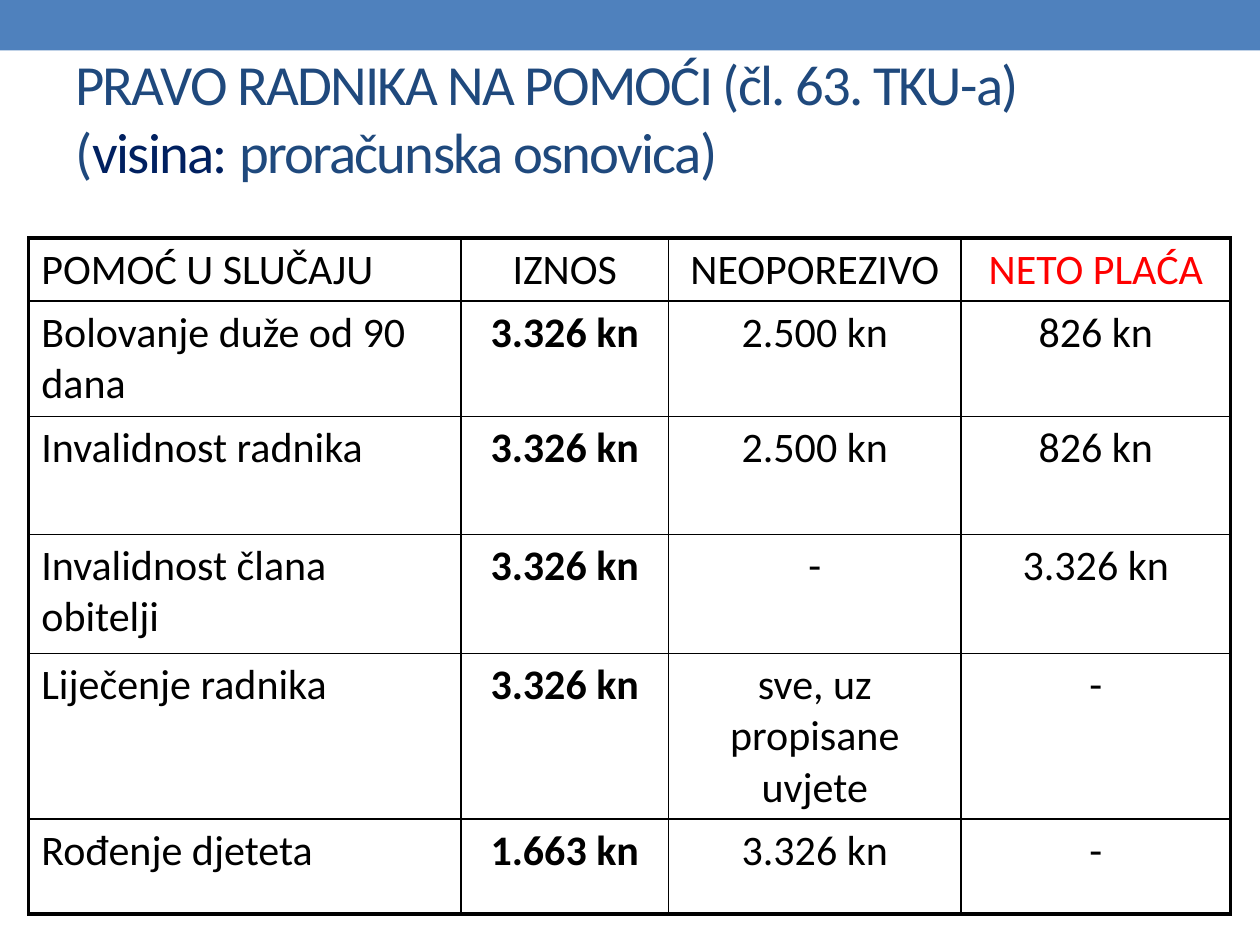
from lxml import etree
from pptx import Presentation
from pptx.dml.color import RGBColor
from pptx.enum.shapes import MSO_SHAPE
from pptx.enum.text import MSO_ANCHOR, PP_ALIGN
from pptx.oxml.ns import qn
from pptx.util import Cm, Pt

RECTANGLE = MSO_SHAPE.RECTANGLE
MIDDLE = MSO_ANCHOR.MIDDLE
LEFT, CENTER = PP_ALIGN.LEFT, PP_ALIGN.CENTER

# Content
FONT = "Calibri"
COLORS = {"band": "4F81BD", "title": "1F497D", "navy": "002060",
          "black": "000000", "red": "FF0000"}
TITLE_LINES = [
    [("PRAVO RADNIKA NA POMOĆI (čl. 63. TKU-a)", "title")],
    [("(", "title"), ("visina: ", "navy"), ("proračunska osnovica)", "title")],
]
ROWS = [
    ("POMOĆ U SLUČAJU", "IZNOS", "NEOPOREZIVO", "NETO PLAĆA"),
    ("Bolovanje duže od 90 dana", "3.326 kn", "2.500 kn", "826 kn"),
    ("Invalidnost radnika", "3.326 kn", "2.500 kn", "826 kn"),
    ("Invalidnost člana obitelji", "3.326 kn", "-", "3.326 kn"),
    ("Liječenje radnika", "3.326 kn", "sve, uz propisane uvjete", "-"),
    ("Rođenje djeteta", "1.663 kn", "3.326 kn", "-"),
]
COLUMN_WIDTHS = [8.71, 4.19, 5.89, 5.44]
ROW_HEIGHTS = [1.27, 2.33, 2.37, 2.4, 3.34, 1.91]
AMOUNT_COLUMN = 1
INNER_LINE, OUTER_LINE = 1, 2.25


def color(name):
    return RGBColor.from_string(COLORS[name])


def format_run(run, size, color_name, bold=False):
    run.font.name = FONT
    run.font.size = Pt(size)
    run.font.bold = bold
    run.font.color.rgb = color(color_name)


def set_borders(cell, widths):
    """Draw black borders; widths are points for left, right, top, bottom."""
    properties = cell._tc.get_or_add_tcPr()
    for position, (side, width) in enumerate(zip("LRTB", widths)):
        line = etree.Element(qn(f"a:ln{side}"), w=str(Pt(width)))
        fill = etree.SubElement(line, qn("a:solidFill"))
        etree.SubElement(fill, qn("a:srgbClr"), val=COLORS["black"])
        properties.insert(position, line)


presentation = Presentation()
presentation.slide_width, presentation.slide_height = Cm(25.4), Cm(19.05)
slide = presentation.slides.add_slide(presentation.slide_layouts[6])

# Top band
band = slide.shapes.add_shape(RECTANGLE, 0, 0, Cm(25.4), Cm(1.02))
band.shadow.inherit = False
band.fill.solid()
band.fill.fore_color.rgb = color("band")
band.line.fill.background()

# Title
title = slide.shapes.add_textbox(Cm(1.27), Cm(0.76), Cm(22.86), Cm(3.18))
title.text_frame.word_wrap = True
title.text_frame.vertical_anchor = MIDDLE
paragraph = title.text_frame.paragraphs[0]
for line_index, pieces in enumerate(TITLE_LINES):
    if line_index:
        paragraph.add_line_break()
    for text, color_name in pieces:
        run = paragraph.add_run()
        run.text = text
        format_run(run, 32.4, color_name)
        run.font._element.set("spc", "-100")

# Table
table = slide.shapes.add_table(
    len(ROWS), len(COLUMN_WIDTHS), Cm(0.58), Cm(4.8),
    Cm(sum(COLUMN_WIDTHS)), Cm(sum(ROW_HEIGHTS))).table
table.first_row = table.horz_banding = False
for column, width in zip(table.columns, COLUMN_WIDTHS):
    column.width = Cm(width)
for row, height in zip(table.rows, ROW_HEIGHTS):
    row.height = Cm(height)

last_row, last_column = len(ROWS) - 1, len(COLUMN_WIDTHS) - 1
for row_index, values in enumerate(ROWS):
    for column_index, value in enumerate(values):
        cell = table.cell(row_index, column_index)
        cell.fill.background()
        cell.text_frame.text = value
        paragraph = cell.text_frame.paragraphs[0]
        paragraph.alignment = CENTER if column_index else LEFT
        is_header = row_index == 0
        format_run(paragraph.runs[0], 24,
                   "red" if is_header and column_index == last_column else "black",
                   bold=column_index == AMOUNT_COLUMN and not is_header)
        on_edge = (column_index == 0, column_index == last_column,
                   row_index == 0, row_index == last_row)
        set_borders(cell, [OUTER_LINE if edge else INNER_LINE for edge in on_edge])

presentation.save("out.pptx")
